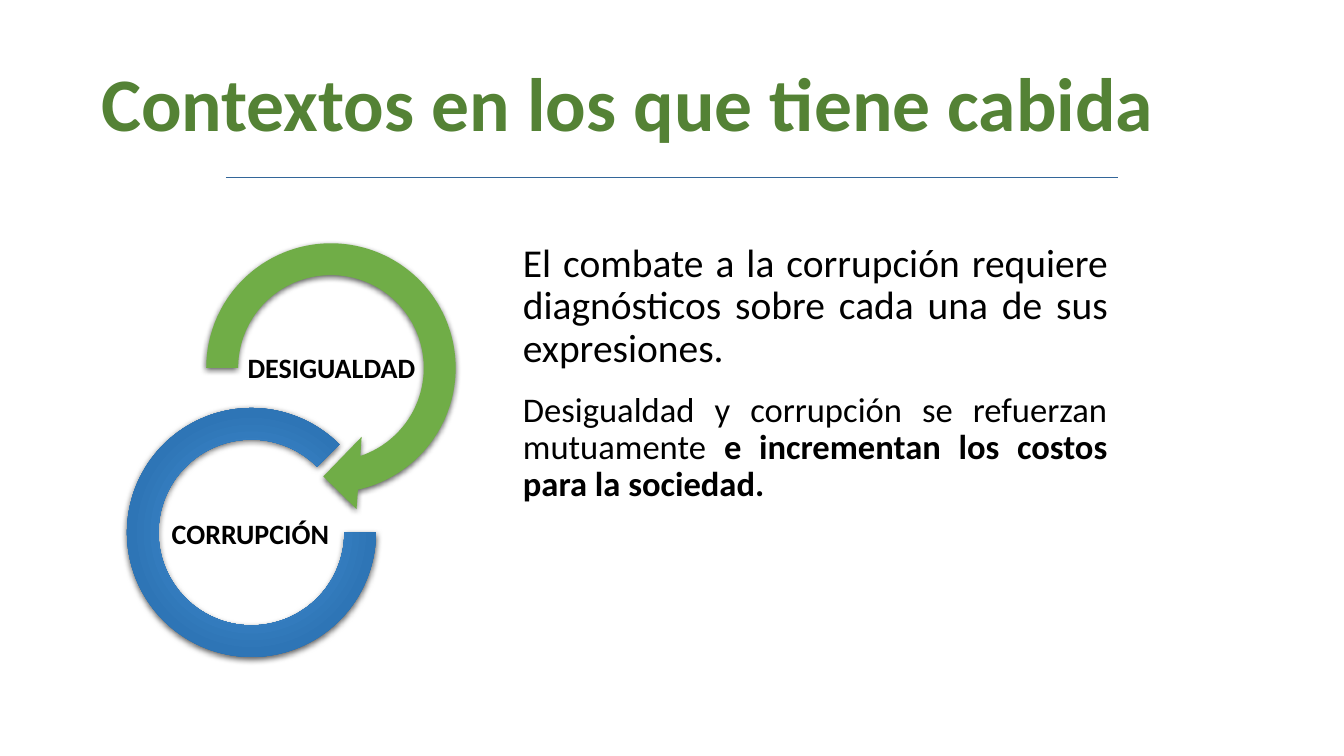
from lxml import etree
from pptx import Presentation
from pptx.dml.color import RGBColor
from pptx.enum.shapes import MSO_CONNECTOR as CONNECTOR, MSO_SHAPE as SHAPE
from pptx.enum.text import MSO_ANCHOR as ANCHOR, PP_ALIGN as ALIGN
from pptx.oxml import parse_xml
from pptx.oxml.ns import nsdecls, qn
from pptx.util import Emu, Pt

EMU_PER_PX = 914400 / 100.8
FONT = "Calibri"
BLACK = RGBColor(0x00, 0x00, 0x00)
TITLE_GREEN = RGBColor(0x54, 0x82, 0x35)
ARROW_GREEN = RGBColor(0x70, 0xAD, 0x47)
RULE_BLUE = RGBColor(0x33, 0x66, 0x99)
LIGHT_BLUE = RGBColor(0x40, 0x8B, 0xCE)
MID_BLUE = RGBColor(0x2E, 0x75, 0xB6)
DARK_BLUE = RGBColor(0x2B, 0x6D, 0xA9)
ARC_STOPS = [(0, LIGHT_BLUE), (23, LIGHT_BLUE), (69, MID_BLUE), (97, DARK_BLUE)]


def px(length):
    return Emu(round(length * EMU_PER_PX))


def add_text(shapes, box, paragraphs, color=BLACK, align=ALIGN.CENTER,
             anchor=ANCHOR.MIDDLE, inset=None, gap=0):
    """Each paragraph is a list of (text, size, bold) runs."""
    frame = shapes.add_textbox(*map(px, box)).text_frame
    frame.word_wrap = True
    frame.vertical_anchor = anchor
    if inset is not None:
        frame.margin_left = frame.margin_right = px(inset)
        frame.margin_top = frame.margin_bottom = px(inset)
    for index, runs in enumerate(paragraphs):
        paragraph = frame.add_paragraph() if index else frame.paragraphs[0]
        paragraph.alignment = align
        paragraph.line_spacing = 0.9
        if index:
            paragraph.space_before = Pt(gap)
        for text, size, bold in runs:
            run = paragraph.add_run()
            run.text = text
            run.font.name = FONT
            run.font.size = Pt(size)
            run.font.bold = bold
            run.font.color.rgb = color


def add_ring(shapes, kind, box, adjustments, color):
    shape = shapes.add_shape(kind, *map(px, box))
    for index, value in enumerate(adjustments):
        shape.adjustments[index] = value
    shape.fill.solid()
    shape.fill.fore_color.rgb = color
    shape.line.fill.background()
    # Soft shadow below the ring
    shape.shadow.inherit = False
    effects = shape._element.spPr.find(qn("a:effectLst"))
    effects.append(parse_xml(
        f'<a:outerShdw {nsdecls("a")} blurRad="{Pt(4.5)}" dist="{Pt(1.5)}" '
        'dir="5400000" rotWithShape="0"><a:srgbClr val="000000">'
        '<a:alpha val="63000"/></a:srgbClr></a:outerShdw>'))
    return shape


def set_radial_fill(shape, stops):
    properties = shape._element.spPr
    gradient = etree.Element(qn("a:gradFill"), rotWithShape="1")
    stop_list = etree.SubElement(gradient, qn("a:gsLst"))
    for position, color in stops:
        stop = etree.SubElement(stop_list, qn("a:gs"), pos=str(position * 1000))
        etree.SubElement(stop, qn("a:srgbClr"), val=str(color))
    path = etree.SubElement(gradient, qn("a:path"), path="circle")
    etree.SubElement(path, qn("a:fillToRect"), l="50000", t="50000", r="50000", b="50000")
    properties.replace(properties.find(qn("a:solidFill")), gradient)


def add_heading(slide, left, top, width, height):
    add_text(slide.shapes, (left, top, width, height),
             [[("Contextos en los que tiene cabida", 54, True)]], color=TITLE_GREEN)
    # Rule under the title
    rule_left, rule_top = left + 178, top + 143
    rule = slide.shapes.add_connector(
        CONNECTOR.STRAIGHT, px(rule_left), px(rule_top), px(rule_left + 892), px(rule_top))
    rule.line.color.rgb = RULE_BLUE
    rule.line.width = Pt(0.5)
    etree.SubElement(rule._element.spPr, qn("a:effectLst"))


def add_cycle(slide, left, top):
    shapes = slide.shapes.add_group_shape().shapes
    # Inequality arrow
    add_ring(shapes, SHAPE.CIRCULAR_ARROW, (left + 59, top, 290, 290),
             (0.11, 11.423, 45, 108, 0.125), ARROW_GREEN)
    add_text(shapes, (left + 116, top + 94, 177, 104),
             [[("DESIGUALDAD", 20, True)]], inset=1)
    # Corruption arc
    arc = add_ring(shapes, SHAPE.BLOCK_ARC, (left, top + 185, 249, 249),
                   (0, 189, 0.127), MID_BLUE)
    set_radial_fill(arc, ARC_STOPS)
    add_text(shapes, (left + 24, top + 266, 199, 93),
             [[("CORRUPCIÓN", 20, True)]], inset=1)


def add_body(slide, left, top, width, height):
    add_text(slide.shapes, (left, top, width, height), [
        [("El combate a la corrupción requiere diagnósticos sobre cada una "
          "de sus expresiones.", 28.2, False)],
        [("Desigualdad y corrupción se refuerzan mutuamente ", 24.7, False),
         ("e incrementan los costos para la sociedad.", 24.7, True)],
    ], align=ALIGN.JUSTIFY, anchor=ANCHOR.TOP, gap=15.3)


def main():
    presentation = Presentation()
    presentation.slide_width, presentation.slide_height = px(1344), px(756)
    slide = presentation.slides.add_slide(presentation.slide_layouts[6])
    add_heading(slide, 48, 34, 1159, 146)
    add_body(slide, 513, 238, 605, 419)
    add_cycle(slide, 127, 223)
    presentation.save("out.pptx")


if __name__ == "__main__":
    main()
